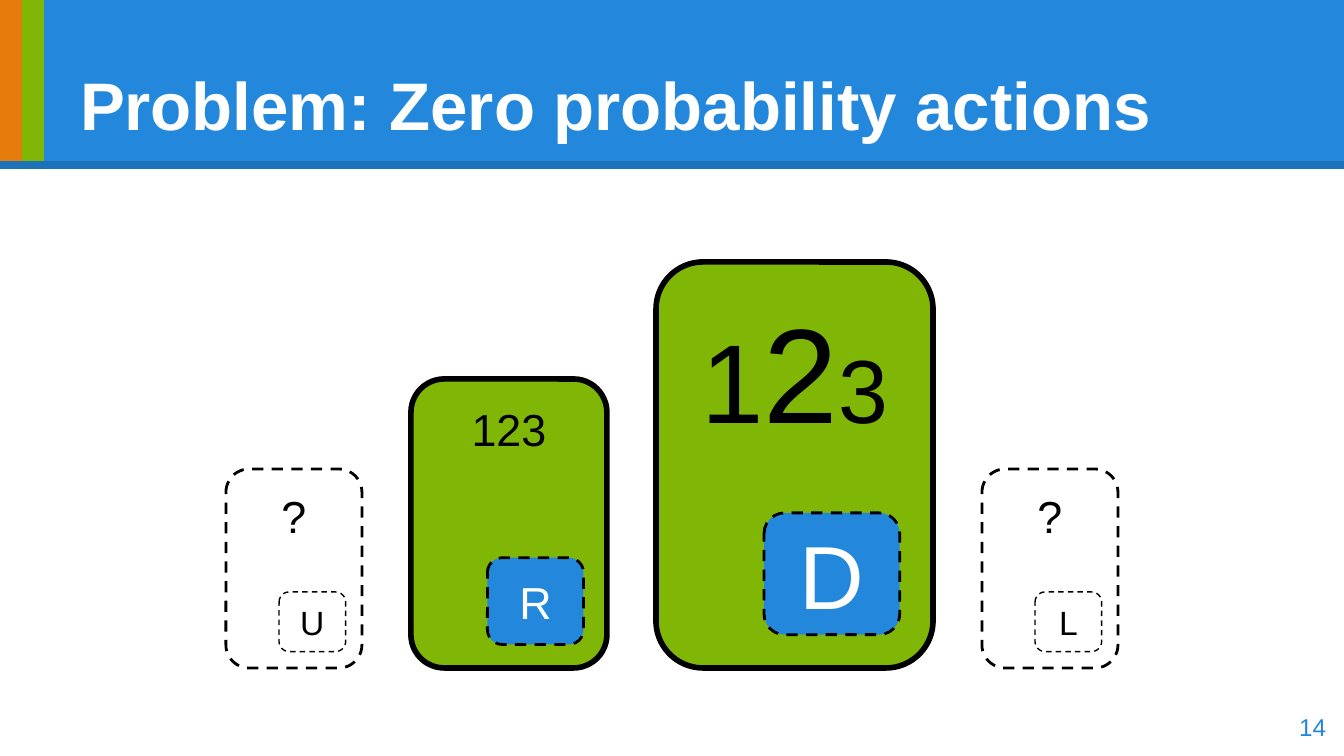
from dataclasses import dataclass

from lxml import etree
from pptx import Presentation
from pptx.dml.color import RGBColor
from pptx.enum.dml import MSO_LINE
from pptx.enum.shapes import MSO_CONNECTOR, MSO_SHAPE
from pptx.enum.text import MSO_ANCHOR, PP_ALIGN
from pptx.oxml.ns import qn
from pptx.util import Pt

RECTANGLE, ROUNDED = MSO_SHAPE.RECTANGLE, MSO_SHAPE.ROUNDED_RECTANGLE
STRAIGHT = MSO_CONNECTOR.STRAIGHT
DASH, SOLID = MSO_LINE.DASH, MSO_LINE.SOLID
TOP, MIDDLE, BOTTOM = MSO_ANCHOR.TOP, MSO_ANCHOR.MIDDLE, MSO_ANCHOR.BOTTOM
LEFT, CENTER, RIGHT = PP_ALIGN.LEFT, PP_ALIGN.CENTER, PP_ALIGN.RIGHT


@dataclass(frozen=True)
class Theme:
    font: str = "Arial"
    blue: str = "2388DB"
    green: str = "80B606"
    orange: str = "E67C0B"
    black: str = "000000"
    white: str = "FFFFFF"
    title_size: int = 36
    number_size: int = 13


THEME = Theme()

TITLE = "Problem: Zero probability actions"
SLIDE_NUMBER = "14"

# Each text is a list of (wording, size) runs; "known" cards are filled.
CARDS = [
    {"size": (136, 199), "value": [("?", 24)], "action": [("U", 18)],
     "known": False, "key_line": 0.75},
    {"size": (196, 289), "value": [("123", 24)], "action": [("R", 24)],
     "known": True, "key_line": 1.5},
    {"size": (277, 406), "value": [("1", 60), ("2", 72), ("3", 48)],
     "action": [("D", 48)], "known": True, "key_line": 1.5},
    {"size": (136, 199), "value": [("?", 24)], "action": [("L", 18)],
     "known": False, "key_line": 0.75},
]

# Lengths in px
SLIDE_WIDTH, SLIDE_HEIGHT = 1344, 756
EMU_PER_PX = 9144000 / SLIDE_WIDTH
INSET = 13
CARD_GAP, CARD_BOTTOM = 49, 668
STRIPE_WIDTH, STRIPE_HEIGHT = 22, 161
BANNER_HEIGHT, RULE_Y = 169, 165

# Action key measured against its card
KEY_WIDTH, KEY_HEIGHT, KEY_MARGIN = 0.49, 0.3, 0.12
CORNER = 0.17


def px(length):
    return round(length * EMU_PER_PX)


def place(shape, left, top, width, height):
    shape.left, shape.top = px(left), px(top)
    shape.width, shape.height = px(width), px(height)


def write(shape, runs, color, anchor, align, bold=False):
    frame = shape.text_frame
    frame.word_wrap = True
    frame.vertical_anchor = anchor
    frame.margin_left = frame.margin_right = px(INSET)
    frame.margin_top = frame.margin_bottom = px(INSET)
    paragraph = frame.paragraphs[0]
    paragraph.alignment = align
    for wording, size in runs:
        run = paragraph.add_run()
        run.text = wording
        run.font.name = THEME.font
        run.font.size = Pt(size)
        run.font.bold = bold
        run.font.color.rgb = RGBColor.from_string(color)


def add_box(slide, kind, box, fill=None, line_width=None, dash=SOLID):
    shape = slide.shapes.add_shape(kind, *map(px, box))
    shape.shadow.inherit = False
    if kind == ROUNDED:
        shape.adjustments[0] = CORNER
    if fill:
        shape.fill.solid()
        shape.fill.fore_color.rgb = RGBColor.from_string(fill)
    else:
        shape.fill.background()
    if line_width:
        shape.line.color.rgb = RGBColor.from_string(THEME.black)
        shape.line.width = Pt(line_width)
        shape.line.dash_style = dash
    else:
        shape.line.fill.background()
    return shape


def add_banner(slide):
    add_box(slide, RECTANGLE, (0, 0, SLIDE_WIDTH, BANNER_HEIGHT), THEME.blue)
    rule = slide.shapes.add_connector(
        STRAIGHT, 0, px(RULE_Y), px(SLIDE_WIDTH), px(RULE_Y))
    rule.line.width = Pt(4.5)
    rule.line.color.rgb = RGBColor.from_string(THEME.black)
    properties = rule._element.spPr
    color = properties.find(".//" + qn("a:srgbClr"))
    etree.SubElement(color, qn("a:alpha")).set("val", "15000")
    etree.SubElement(properties, qn("a:effectLst"))

    title = slide.shapes.title
    place(title, 67, 31, 1210, 126)
    write(title, [(TITLE, THEME.title_size)], THEME.white, BOTTOM, LEFT, True)
    slide.shapes._spTree.append(title._element)  # in front of the banner

    for index, color in enumerate((THEME.orange, THEME.green)):
        add_box(slide, RECTANGLE,
                (index * STRIPE_WIDTH, 0, STRIPE_WIDTH, STRIPE_HEIGHT), color)


def add_card(slide, card, left):
    """Draw a card with its action key in the lower right corner."""
    width, height = card["size"]
    known = card["known"]
    shape = add_box(slide, ROUNDED, (left, CARD_BOTTOM - height, width, height),
                    THEME.green if known else None,
                    3 if known else 1.5, SOLID if known else DASH)
    write(shape, card["value"], THEME.black, TOP, CENTER)

    key_width, key_height = width * KEY_WIDTH, height * KEY_HEIGHT
    margin = width * KEY_MARGIN
    key = add_box(slide, ROUNDED,
                  (left + width - margin - key_width,
                   CARD_BOTTOM - margin - key_height, key_width, key_height),
                  THEME.blue if known else None, card["key_line"], DASH)
    write(key, card["action"], THEME.white if known else THEME.black,
          MIDDLE, CENTER)


def add_card_row(slide):
    """Centre the cards on the slide, standing on one line."""
    widths = [card["size"][0] for card in CARDS]
    row_width = sum(widths) + CARD_GAP * (len(CARDS) - 1)
    left = (SLIDE_WIDTH - row_width) / 2
    for card, width in zip(CARDS, widths):
        add_card(slide, card, left)
        left += width + CARD_GAP


def main():
    presentation = Presentation()
    presentation.slide_width = px(SLIDE_WIDTH)
    presentation.slide_height = px(SLIDE_HEIGHT)
    slide = presentation.slides.add_slide(presentation.slide_layouts[5])
    add_banner(slide)
    add_card_row(slide)
    number = slide.shapes.add_textbox(px(1258), px(698), px(81), px(58))
    write(number, [(SLIDE_NUMBER, THEME.number_size)], THEME.blue, MIDDLE, RIGHT)
    presentation.save("out.pptx")


if __name__ == "__main__":
    main()
